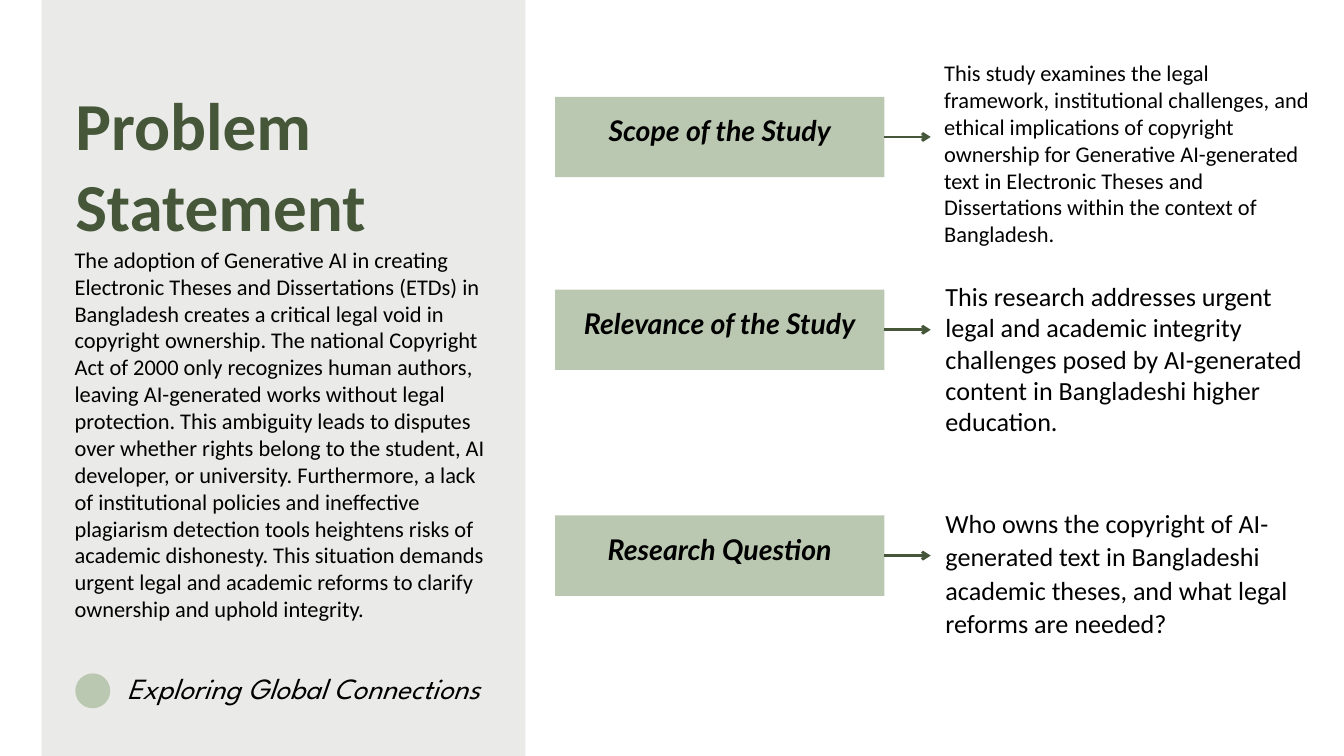
from lxml.etree import SubElement
from pptx import Presentation
from pptx.dml.color import RGBColor
from pptx.enum.shapes import MSO_CONNECTOR, MSO_SHAPE
from pptx.enum.text import MSO_ANCHOR, MSO_AUTO_SIZE, PP_ALIGN
from pptx.oxml.ns import qn
from pptx.util import Inches, Pt

WIDTH, HEIGHT = Inches(20), Inches(11.25)
# Grid of 100 columns and 100 rows
COL, ROW = WIDTH / 100, HEIGHT / 100

SAGE = RGBColor(0xBB, 0xC8, 0xB1)
FOREST = RGBColor(0x46, 0x57, 0x39)
PALE = RGBColor(0xEA, 0xEB, 0xE9)
BLACK = RGBColor(0, 0, 0)

PROBLEM = (
    "The adoption of Generative AI in creating Electronic Theses and "
    "Dissertations (ETDs) in Bangladesh creates a critical legal void in "
    "copyright ownership. The national Copyright Act of 2000 only recognizes "
    "human authors, leaving AI-generated works without legal protection. This "
    "ambiguity leads to disputes over whether rights belong to the student, AI "
    "developer, or university. Furthermore, a lack of institutional policies "
    "and ineffective plagiarism detection tools heightens risks of academic "
    "dishonesty. This situation demands urgent legal and academic reforms to "
    "clarify ownership and uphold integrity."
)

# Label, top row, description, its size and line spacing, its left and top offsets
TOPICS = [
    ("Scope of the Study", 12.8,
     "This study examines the legal framework, institutional challenges, and "
     "ethical implications of copyright ownership for Generative AI-generated "
     "text in Electronic Theses and Dissertations within the context of "
     "Bangladesh.", 24, None, 28.95, -4.98),
    ("Relevance of the Study", 38.31,
     "This research addresses urgent legal and academic integrity challenges "
     "posed by AI-generated content in Bangladeshi higher education.",
     28, None, 29.05, -1.24),
    ("Research Question", 68.18,
     "Who owns the copyright of AI-generated text in Bangladeshi academic "
     "theses, and what legal reforms are needed?", 28, 35.5, 29.05, -1.25),
]


def place(left, top, width, height):
    return (round(left * COL), round(top * ROW),
            round(width * COL), round(height * ROW))


def add_block(slide, preset, box, color):
    block = slide.shapes.add_shape(preset, *place(*box))
    block.shadow.inherit = False
    block.fill.solid()
    block.fill.fore_color.rgb = color
    block.line.fill.background()
    return block


def write(frame, text, size, font="Calibri", color=BLACK, bold=False,
          italic=False, align=PP_ALIGN.LEFT, spacing=None):
    frame.word_wrap = True
    frame.auto_size = MSO_AUTO_SIZE.NONE
    frame.margin_left = frame.margin_right = 0
    frame.margin_top = frame.margin_bottom = 0
    frame.vertical_anchor = MSO_ANCHOR.TOP
    frame.text = text
    paragraph = frame.paragraphs[0]
    paragraph.alignment = align
    if spacing:
        paragraph.line_spacing = Pt(spacing)
    paragraph.font.name = font
    paragraph.font.size = Pt(size)
    paragraph.font.color.rgb = color
    paragraph.font.bold = bold
    paragraph.font.italic = italic


def add_text(slide, box, text, size, **style):
    frame = slide.shapes.add_textbox(*place(*box)).text_frame
    write(frame, text, size, **style)


def add_arrow(slide, start, end, row):
    left, y, length, _ = place(start, row, end - start, 0)
    arrow = slide.shapes.add_connector(
        MSO_CONNECTOR.STRAIGHT, left, y, left + length, y)
    arrow.line.color.rgb = FOREST
    arrow.line.width = Pt(3)
    SubElement(arrow.line._get_or_add_ln(), qn("a:tailEnd"), type="arrow")
    SubElement(arrow.element.spPr, qn("a:effectLst"))


def add_problem_panel(slide, box):
    left, top, width, height = box
    inner = left + 2.5
    add_block(slide, MSO_SHAPE.RECTANGLE, box, PALE)

    # Title, brought in front of the panel
    title = slide.shapes.title
    title.left, title.top, title.width, title.height = place(
        inner, top + 11.02, width - 2.55, 21.51)
    write(title.text_frame, "Problem Statement", 72, color=FOREST, bold=True)
    title.element.getparent().append(title.element)

    add_text(slide, (inner - 0.05, top + 32.53, 31.1, 50.22), PROBLEM, 24)

    # Tagline with its dot
    add_block(slide, MSO_SHAPE.OVAL, (inner, top + 89.07, 2.6, 4.62), SAGE)
    add_text(slide, (inner + 3.85, top + 87.91, 33.9, 5.51),
             "Exploring Global Connections", 31.4, font="League Spartan",
             italic=True, spacing=44)


def add_topic(slide, box, label, description, size, spacing, shift, rise):
    left, top, width, height = box
    frame = add_block(slide, MSO_SHAPE.RECTANGLE, box, SAGE).text_frame
    write(frame, label, 30.5, font="Lato", bold=True, italic=True,
          align=PP_ALIGN.CENTER, spacing=42.7)
    frame.vertical_anchor = MSO_ANCHOR.MIDDLE
    frame.margin_bottom = Inches(0.28)  # lifts the label above the middle

    add_arrow(slide, left + width, left + width + 3.45, top + height / 2)
    add_text(slide, (left + shift, top + rise, 27.15, 25),
             description, size, spacing=spacing)


def main():
    deck = Presentation()
    deck.slide_width, deck.slide_height = WIDTH, HEIGHT
    slide = deck.slides.add_slide(deck.slide_layouts.get_by_name("Title Only"))

    for label, top, *details in TOPICS:
        add_topic(slide, (41.3, top, 24.5, 10.63), label, *details)
    add_problem_panel(slide, (3.1, 0, 36, 100))

    deck.save("out.pptx")


if __name__ == "__main__":
    main()
